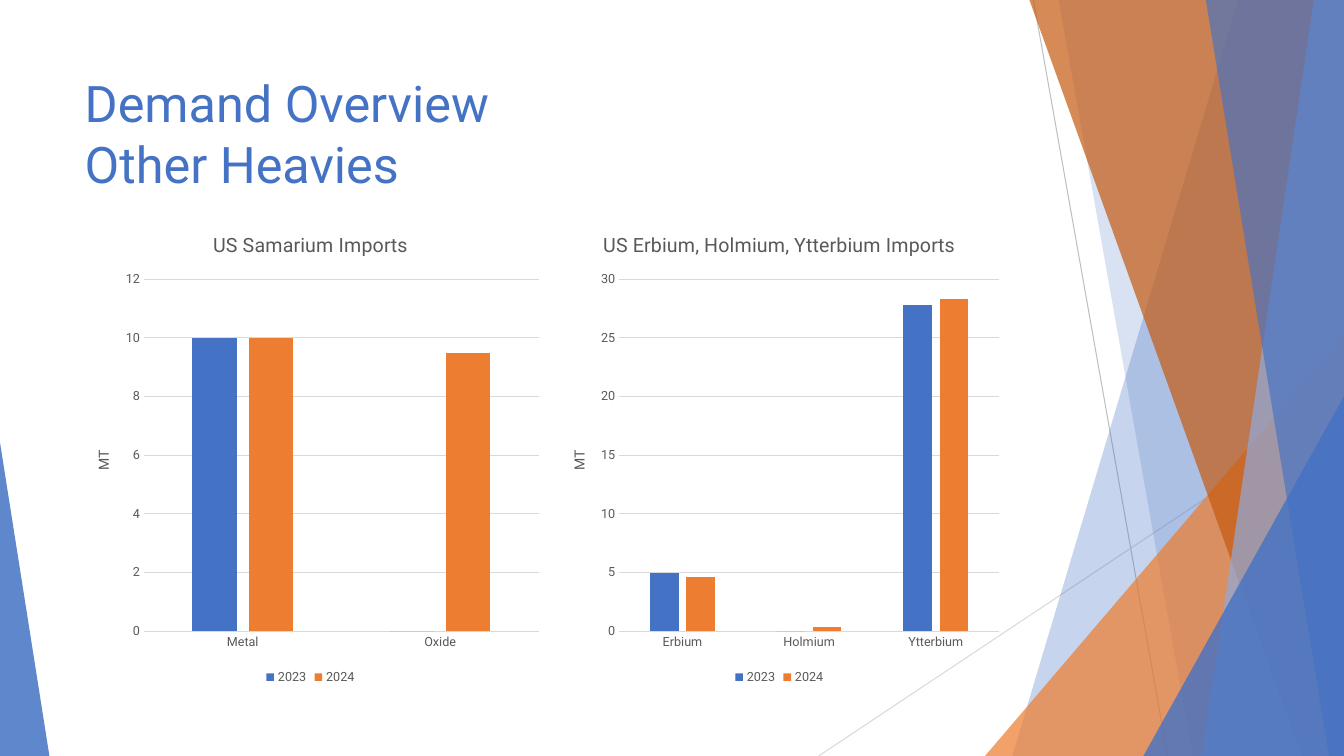
from lxml.etree import SubElement
from pptx import Presentation
from pptx.chart.data import CategoryChartData
from pptx.dml.color import RGBColor
from pptx.enum.chart import XL_CHART_TYPE, XL_LEGEND_POSITION, XL_TICK_MARK
from pptx.enum.shapes import MSO_CONNECTOR, MSO_SHAPE
from pptx.enum.text import MSO_ANCHOR, MSO_AUTO_SIZE, PP_ALIGN
from pptx.oxml import parse_xml
from pptx.oxml.ns import nsdecls, qn
from pptx.util import Pt

PX = 9144  # EMU per px, 100 px to the inch
SLIDE_W, SLIDE_H = 1333, 750
FONT = "Roboto"
BLUE = RGBColor(0x44, 0x72, 0xC4)
PALE_BLUE = RGBColor(0x8F, 0xAA, 0xDC)
ORANGE = RGBColor(0xED, 0x7D, 0x31)
RUST = RGBColor(0xC5, 0x5A, 0x11)
GRAY = RGBColor(0x59, 0x59, 0x59)
RULE_GRAY = RGBColor(0xBF, 0xBF, 0xBF)
GRID_GRAY = RGBColor(0xD9, 0xD9, 0xD9)


def px(*lengths):
    return [length * PX for length in lengths]


def style_facet(facet, color, opacity):
    """Give a shape a translucent fill with no outline or shadow."""
    facet.shadow.inherit = False
    facet.line.fill.background()
    facet.fill.solid()
    facet.fill.fore_color.rgb = color
    solid = facet.fill.fore_color._xFill
    SubElement(solid[0], qn("a:alpha"), val=str(opacity * 1000))


def add_band(slide, box, top_x, bottom_x, color, opacity):
    """Fill the part of the box right of a line from top_x to bottom_x."""
    left, top, width, height = box
    right, bottom = left + width, top + height
    builder = slide.shapes.build_freeform(left + top_x, top, scale=PX)
    builder.add_line_segments(
        [(right, top), (right, bottom), (left + bottom_x, bottom)], close=True)
    style_facet(builder.convert_to_shape(), color, opacity)


def add_wedge(slide, box, apex, color, opacity):
    wedge = slide.shapes.add_shape(MSO_SHAPE.ISOSCELES_TRIANGLE, *px(*box))
    wedge.adjustments[0] = apex
    style_facet(wedge, color, opacity)


def add_hairline(slide, start, end, color):
    hairline = slide.shapes.add_connector(MSO_CONNECTOR.STRAIGHT, *px(*start, *end))
    hairline.line.color.rgb = color
    hairline.line.width = Pt(0.75)
    SubElement(hairline._element.spPr, qn("a:effectLst"))


def add_facets(slide, box):
    """Draw the overlapping facets against the right side of the box."""
    left, top, width, height = box
    right, bottom = left + width, top + height
    add_hairline(slide, (left + 48, top), (left + 181, bottom), RULE_GRAY)
    add_hairline(slide, (right, top + 403), (left - 165, bottom), GRID_GRAY)
    add_band(slide, box, 251, 27, BLUE, 30)
    add_band(slide, box, 73, 206, BLUE, 20)
    add_wedge(slide, (left, top + 333, width, height - 333), 1, ORANGE, 72)
    add_band(slide, box, 44, 314, RUST, 70)
    add_band(slide, box, 326, 215, PALE_BLUE, 70)
    add_band(slide, box, 219, 341, BLUE, 65)
    add_wedge(slide, (left + 157, top + 393, width - 157, height - 393), 1, BLUE, 80)


def add_title(slide, box, lines):
    title = slide.shapes.title
    title.left, title.top, title.width, title.height = px(*box)
    frame = title.text_frame
    frame.word_wrap = True
    frame.auto_size = MSO_AUTO_SIZE.NONE
    frame.vertical_anchor = MSO_ANCHOR.TOP
    paragraph = frame.paragraphs[0]
    paragraph.alignment = PP_ALIGN.LEFT
    for index, line in enumerate(lines):
        if index:
            paragraph.add_line_break()
        run = paragraph.add_run()
        run.text = line
        style_font(run.font, 36, BLUE)


def style_font(font, size, color=GRAY):
    font.name = FONT
    font.size = Pt(size)
    font.bold = False
    font.color.rgb = color


def add_caption(frame, caption, size):
    run = frame.paragraphs[0].add_run()
    run.text = caption
    style_font(run.font, size)


def fix_plot_area(chart):
    """Hold the inner plot area at a fixed share of the chart."""
    plot_area = chart._chartSpace.chart.plotArea
    for layout in plot_area.findall(qn("c:layout")):
        plot_area.remove(layout)
    shares = {"x": 0.15, "y": 0.14, "w": 0.83, "h": 0.74}
    plot_area.insert(0, parse_xml(
        f'<c:layout {nsdecls("c")}><c:manualLayout><c:layoutTarget val="inner"/>'
        '<c:xMode val="edge"/><c:yMode val="edge"/>'
        + "".join(f'<c:{key} val="{share}"/>' for key, share in shares.items())
        + "</c:manualLayout></c:layout>"))


def add_imports_chart(slide, box, caption, imports, top_value, step):
    """Chart imports, a mapping of material to its 2023 and 2024 tonnage."""
    chart_data = CategoryChartData()
    chart_data.categories = list(imports)
    for year, tonnage in zip(("2023", "2024"), zip(*imports.values())):
        chart_data.add_series(year, tonnage)
    chart = slide.shapes.add_chart(
        XL_CHART_TYPE.COLUMN_CLUSTERED, *px(*box), chart_data).chart
    style_font(chart.font, 10)
    add_caption(chart.chart_title.text_frame, caption, 14)
    chart.chart_title.include_in_layout = False
    fix_plot_area(chart)

    bars = chart.plots[0]
    bars.gap_width, bars.overlap, bars.vary_by_categories = 219, -27, False
    for series, color in zip(bars.series, (BLUE, ORANGE)):
        series.format.fill.solid()
        series.format.fill.fore_color.rgb = color
        series.invert_if_negative = False

    materials, tonnes = chart.category_axis, chart.value_axis
    for axis in (materials, tonnes):
        axis.major_tick_mark = axis.minor_tick_mark = XL_TICK_MARK.NONE
        style_font(axis.tick_labels.font, 9)
    tonnes.minimum_scale, tonnes.maximum_scale, tonnes.major_unit = 0, top_value, step
    tonnes.format.line.fill.background()
    add_caption(tonnes.axis_title.text_frame, "MT", 10)
    for rule in (materials.format.line, tonnes.major_gridlines.format.line):
        rule.color.rgb = GRID_GRAY
        rule.width = Pt(0.75)

    chart.has_legend = True
    chart.legend.position = XL_LEGEND_POSITION.BOTTOM
    chart.legend.include_in_layout = False
    style_font(chart.legend.font, 9)


def main():
    deck = Presentation()
    deck.slide_width, deck.slide_height = px(SLIDE_W, SLIDE_H)
    slide = deck.slides.add_slide(deck.slide_layouts[5])
    add_facets(slide, (977, 0, SLIDE_W - 977, SLIDE_H))
    add_wedge(slide, (0, 439, 49, SLIDE_H - 439), 0, BLUE, 85)
    add_title(slide, (74, 67, 940, 144), ("Demand Overview", "Other Heavies"))
    add_imports_chart(slide, (72, 211, 472, 472), "US Samarium Imports",
                      {"Metal": (10, 10), "Oxide": (0, 9.5)}, 12, 2)
    add_imports_chart(slide, (546, 211, 454, 472),
                      "US Erbium, Holmium, Ytterbium Imports",
                      {"Erbium": (5, 4.6), "Holmium": (0, 0.4),
                       "Ytterbium": (27.8, 28.3)}, 30, 5)
    deck.save("out.pptx")


if __name__ == "__main__":
    main()
